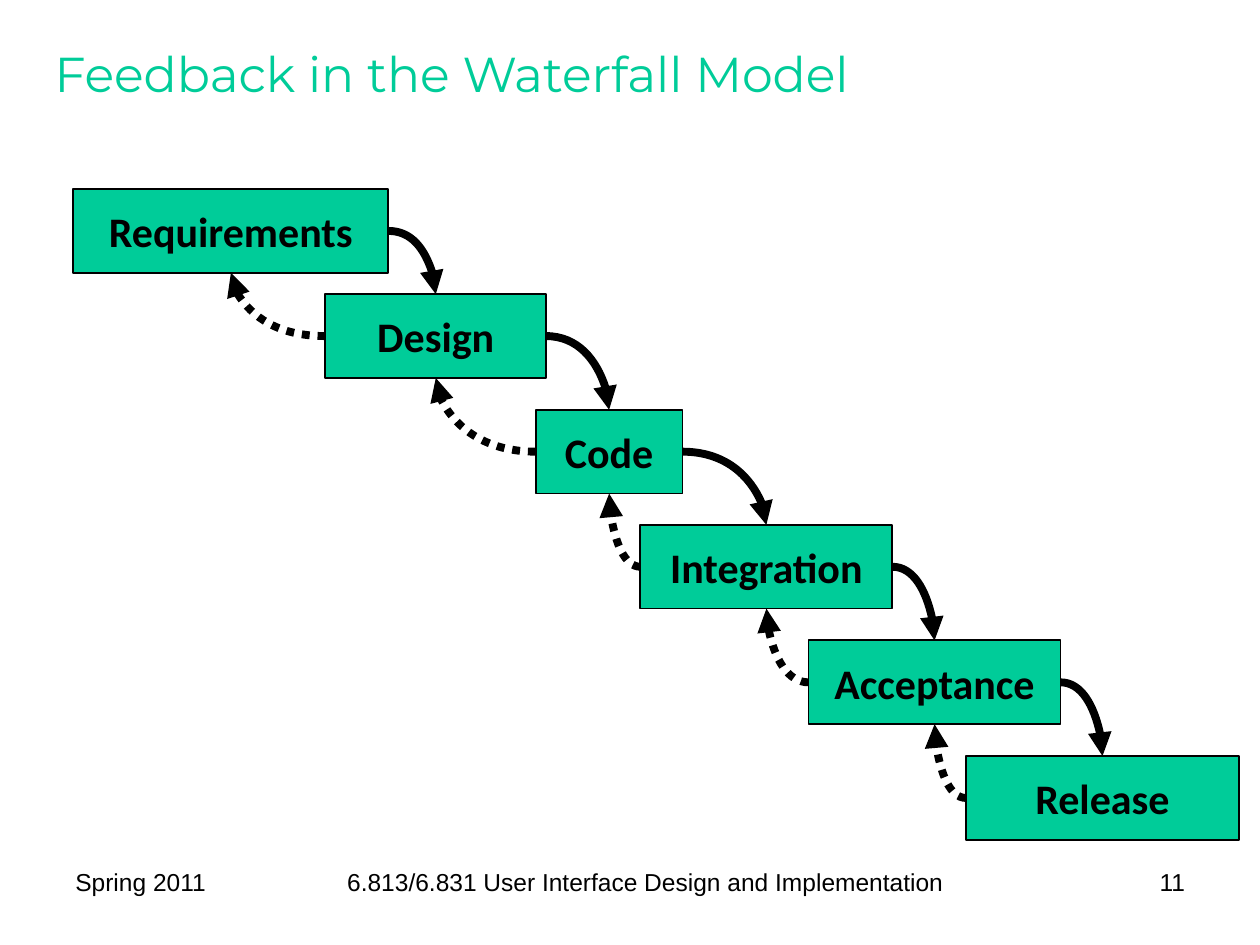
from dataclasses import dataclass
from itertools import pairwise

from lxml.etree import SubElement
from pptx import Presentation
from pptx.dml.color import RGBColor as Rgb
from pptx.enum.dml import MSO_LINE as Dash
from pptx.enum.shapes import MSO_CONNECTOR as Wire, MSO_SHAPE as Form
from pptx.enum.text import MSO_ANCHOR as Anchor, PP_ALIGN as Align
from pptx.oxml.ns import qn
from pptx.shapes.autoshape import Shape
from pptx.slide import Slide
from pptx.util import Cm, Pt


@dataclass(frozen=True)
class Font:
    name: str
    size: float
    color: Rgb
    bold: bool = False


@dataclass(frozen=True)
class Theme:
    green: Rgb = Rgb(0x00, 0xCC, 0x99)
    black: Rgb = Rgb(0, 0, 0)
    edge: float = 1
    arrow: float = 4.5
    title: Font = Font("Montserrat", 28, green)
    stage: Font = Font("Calibri", 24, black, True)
    foot: Font = Font("Arial", 14, black)


@dataclass(frozen=True)
class Label:
    text: str
    left: float
    top: float
    width: float
    height: float
    font: Font
    align: Align = Align.LEFT
    anchor: Anchor = Anchor.TOP


@dataclass(frozen=True)
class Stage:
    name: str
    left: float
    top: float
    width: float


THEME = Theme()
HIGH = 1.69
FOOT_TOP, FOOT_HIGH = 17.36, 1.32

LABELS = [
    Label("Feedback in the Waterfall Model", 0.85, 0.42, 23.5, 2.12,
          THEME.title, anchor=Anchor.MIDDLE),
    Label("Spring 2011", 1.27, FOOT_TOP, 3.81, FOOT_HIGH, THEME.foot),
    Label("6.813/6.831 User Interface Design and Implementation",
          5.29, FOOT_TOP, 15.45, FOOT_HIGH, THEME.foot, Align.CENTER),
    Label("11", 20.96, FOOT_TOP, 3.18, FOOT_HIGH, THEME.foot, Align.RIGHT),
]

STAGES = [
    Stage("Requirements", 1.48, 3.81, 6.35),
    Stage("Design", 6.56, 5.93, 4.45),
    Stage("Code", 10.8, 8.26, 2.96),
    Stage("Integration", 12.91, 10.58, 5.08),
    Stage("Acceptance", 16.3, 12.91, 5.08),
    Stage("Release", 19.47, 15.24, 5.51),
]


def write(shape: Shape, text: str, font: Font, align: Align,
          anchor: Anchor, wrap: bool) -> None:
    frame = shape.text_frame
    frame.word_wrap = wrap
    frame.vertical_anchor = anchor
    para = frame.paragraphs[0]
    para.alignment = align
    run = para.add_run()
    run.text = text
    run.font.name = font.name
    run.font.size = Pt(font.size)
    run.font.bold = font.bold
    run.font.color.rgb = font.color


def add_label(slide: Slide, label: Label) -> None:
    box = slide.shapes.add_textbox(Cm(label.left), Cm(label.top),
                                   Cm(label.width), Cm(label.height))
    write(box, label.text, label.font, label.align, label.anchor, True)


def add_stage(slide: Slide, stage: Stage) -> None:
    box = slide.shapes.add_shape(Form.RECTANGLE, Cm(stage.left), Cm(stage.top),
                                 Cm(stage.width), Cm(HIGH))
    box.shadow.inherit = False
    box.fill.solid()
    box.fill.fore_color.rgb = THEME.green
    box.line.color.rgb = THEME.black
    box.line.width = Pt(THEME.edge)
    write(box, stage.name, THEME.stage, Align.CENTER, Anchor.MIDDLE, False)


def add_arrow(slide: Slide, left: float, top: float, right: float,
              low: float, back: bool = False) -> None:
    """Curve from top left down to low right, or turned half round if back."""
    wire = slide.shapes.add_connector(Wire.CURVE, Cm(left), Cm(top),
                                      Cm(right), Cm(low))
    wire.line.color.rgb = THEME.black
    wire.line.width = Pt(THEME.arrow)
    props = wire._element.spPr
    props.find(qn("a:prstGeom")).set("prst", "curvedConnector2")
    if back:
        wire.line.dash_style = Dash.ROUND_DOT
        props.find(qn("a:xfrm")).set("rot", str(180 * 60000))
    SubElement(props.find(qn("a:ln")), qn("a:tailEnd"), type="triangle")
    SubElement(props, qn("a:effectLst"))


def link(slide: Slide, one: Stage, two: Stage, back: bool) -> None:
    """Join the side of one stage to the top or bottom of its neighbour."""
    if back:
        add_arrow(slide, one.left + one.width / 2, one.top + HIGH,
                  two.left, two.top + HIGH / 2, back)
    else:
        add_arrow(slide, one.left + one.width, one.top + HIGH / 2,
                  two.left + two.width / 2, two.top)


def main() -> None:
    deck = Presentation()
    deck.slide_width, deck.slide_height = Cm(25.4), Cm(19.05)
    slide = deck.slides.add_slide(deck.slide_layouts[6])
    for label in LABELS:
        add_label(slide, label)
    for stage in STAGES:
        add_stage(slide, stage)
    for back in (False, True):
        for one, two in pairwise(STAGES):
            link(slide, one, two, back)
    deck.save("out.pptx")


if __name__ == "__main__":
    main()
